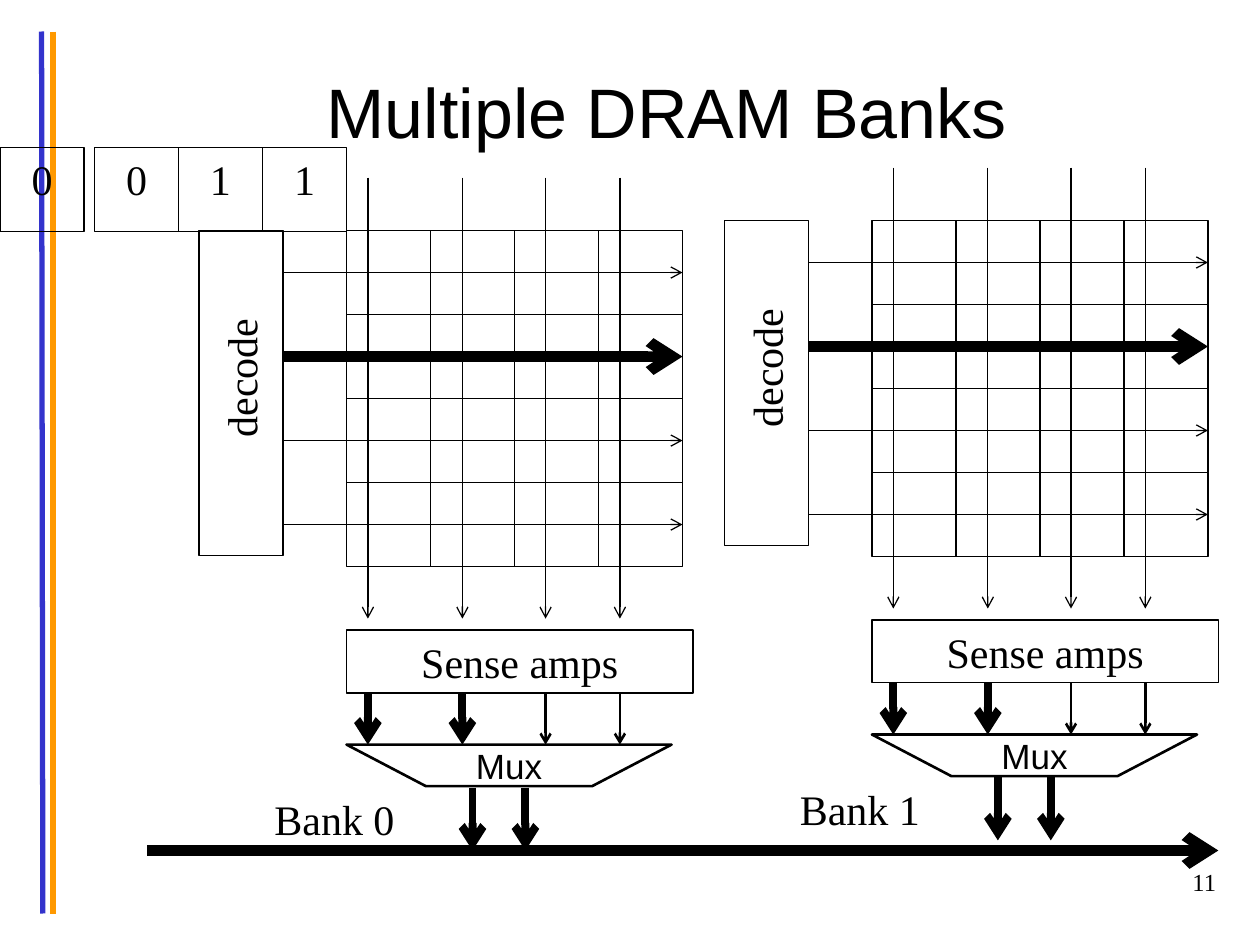
"""Draw two DRAM banks that share one output bus."""
from dataclasses import dataclass

from lxml import etree
from pptx import Presentation
from pptx.dml.color import RGBColor
from pptx.enum.shapes import MSO_CONNECTOR, MSO_SHAPE
from pptx.enum.text import MSO_ANCHOR, PP_ALIGN
from pptx.oxml.ns import qn
from pptx.util import Inches, Pt

LINE = MSO_CONNECTOR.STRAIGHT
RECT = MSO_SHAPE.RECTANGLE
TOP, MIDDLE = MSO_ANCHOR.TOP, MSO_ANCHOR.MIDDLE
LEFT, CENTER, RIGHT = PP_ALIGN.LEFT, PP_ALIGN.CENTER, PP_ALIGN.RIGHT
SERIF, SANS = "Times New Roman", "Arial"
BLACK, BLUE, ORANGE = "000000", "3333CC", "FF9900"
CELL = 2 / 3
THIN, MID, THICK, HEAVY = 0.75, 1.5, 4.5, 6


@dataclass
class Bank:
    name: str
    x: float
    y: float


@dataclass
class Wire:
    x: float
    width: float


BANKS = [Bank("Bank 0", 2.75, 1.83), Bank("Bank 1", 6.92, 1.75)]
WIRES = [Wire(0.17, THICK), Wire(0.92, THICK), Wire(1.58, MID), Wire(2.17, MID)]
ROWS = [THIN, HEAVY, THIN, THIN]
TAPS = [1, 1.42]
BITS = [("0", 0), ("0", 0.75), ("1", 0.75 + CELL), ("1", 0.75 + 2 * CELL)]


def color(code: str) -> RGBColor:
    return RGBColor.from_string(code)


def write(shape, text: str, size: float, font: str = SERIF, align=CENTER,
          anchor=TOP, wrap: bool = True) -> None:
    frame = shape.text_frame
    frame.word_wrap = wrap
    frame.vertical_anchor = anchor
    para = frame.paragraphs[0]
    para.alignment = align
    run = para.add_run()
    run.text = text
    run.font.size = Pt(size)
    run.font.name = font
    run.font.color.rgb = color(BLACK)


def outline(shape, width: float) -> None:
    shape.shadow.inherit = False
    shape.fill.background()
    shape.line.color.rgb = color(BLACK)
    shape.line.width = Pt(width)


def box(slide, x: float, y: float, w: float, h: float, text: str = "") -> None:
    shape = slide.shapes.add_shape(RECT, Inches(x), Inches(y), Inches(w), Inches(h))
    outline(shape, THIN)
    if text:
        write(shape, text, 24)


def label(slide, x: float, y: float, w: float, h: float, text: str,
          size: float = 24, align=LEFT, wrap: bool = False, turn: float = 0) -> None:
    shape = slide.shapes.add_textbox(Inches(x), Inches(y), Inches(w), Inches(h))
    shape.rotation = turn
    write(shape, text, size, align=align, wrap=wrap)


def line(slide, x1: float, y1: float, x2: float, y2: float, width: float,
         code: str = BLACK, arrow: bool = True) -> None:
    link = slide.shapes.add_connector(LINE, Inches(x1), Inches(y1), Inches(x2), Inches(y2))
    link.line.color.rgb = color(code)
    link.line.width = Pt(width)
    if arrow:
        etree.SubElement(link.line._get_or_add_ln(), qn("a:tailEnd"), type="arrow")
    etree.SubElement(link._element.spPr, qn("a:effectLst"))


def mux(slide, x: float, y: float) -> None:
    points = [(x + 0.63, y + 0.33), (x + 1.95, y + 0.33), (x + 2.58, y)]
    path = slide.shapes.build_freeform(Inches(x), Inches(y))
    path.add_line_segments([(Inches(a), Inches(b)) for a, b in points], close=True)
    shape = path.convert_to_shape()
    outline(shape, MID)
    write(shape, "Mux", 20, SANS, anchor=MIDDLE, wrap=False)


def draw(slide, bank: Bank) -> None:
    x, y = bank.x, bank.y
    for row in range(4):
        for col in range(4):
            box(slide, x + col * CELL, y + row * CELL, CELL, CELL)
    box(slide, x - 1.17, y, CELL, 2.58)
    for row, width in enumerate(ROWS):
        mid = y + (row + 0.5) * CELL
        line(slide, x - 0.5, mid, x + 4 * CELL, mid, width)
    label(slide, x - 1.41, y + 0.91, 1.15, 0.51, "decode", turn=270)
    box(slide, x, y + 3.17, 2.75, 0.5, "Sense amps")
    mux(slide, x, y + 4.08)
    for wire in WIRES:
        line(slide, x + wire.x, y - 0.42, x + wire.x, y + 3.08, THIN)
        line(slide, x + wire.x, y + 3.67, x + wire.x, y + 4.08, wire.width)
    for tap in TAPS:
        line(slide, x + tap, y + 4.42, x + tap, y + 4.92, THICK)
    label(slide, x - 0.67, y + 4.42, 1.16, 0.51, bank.name)


def main() -> None:
    deck = Presentation()
    deck.slide_width, deck.slide_height = Inches(10), Inches(7.5)
    slide = deck.slides.add_slide(deck.slide_layouts[5])
    line(slide, 0.33, 0.25, 0.34, 7.25, 3, BLUE, False)
    line(slide, 0.42, 0.25, 0.42, 7.25, 3, ORANGE, False)
    title = slide.shapes.title
    title.left, title.top = Inches(0.75), Inches(0.25)
    title.width, title.height = Inches(9.08), Inches(1.25)
    write(title, "Multiple DRAM Banks", 40, SANS, anchor=MIDDLE)
    for bank in BANKS:
        draw(slide, bank)
    line(slide, 1.17, 6.75, 9.67, 6.75, HEAVY)
    for bit, x in BITS:
        box(slide, x, 1.17, CELL, CELL, bit)
    label(slide, 7.67, 6.83, 2.08, 0.5, "11", 14, RIGHT, True)
    deck.save("out.pptx")


if __name__ == "__main__":
    main()
